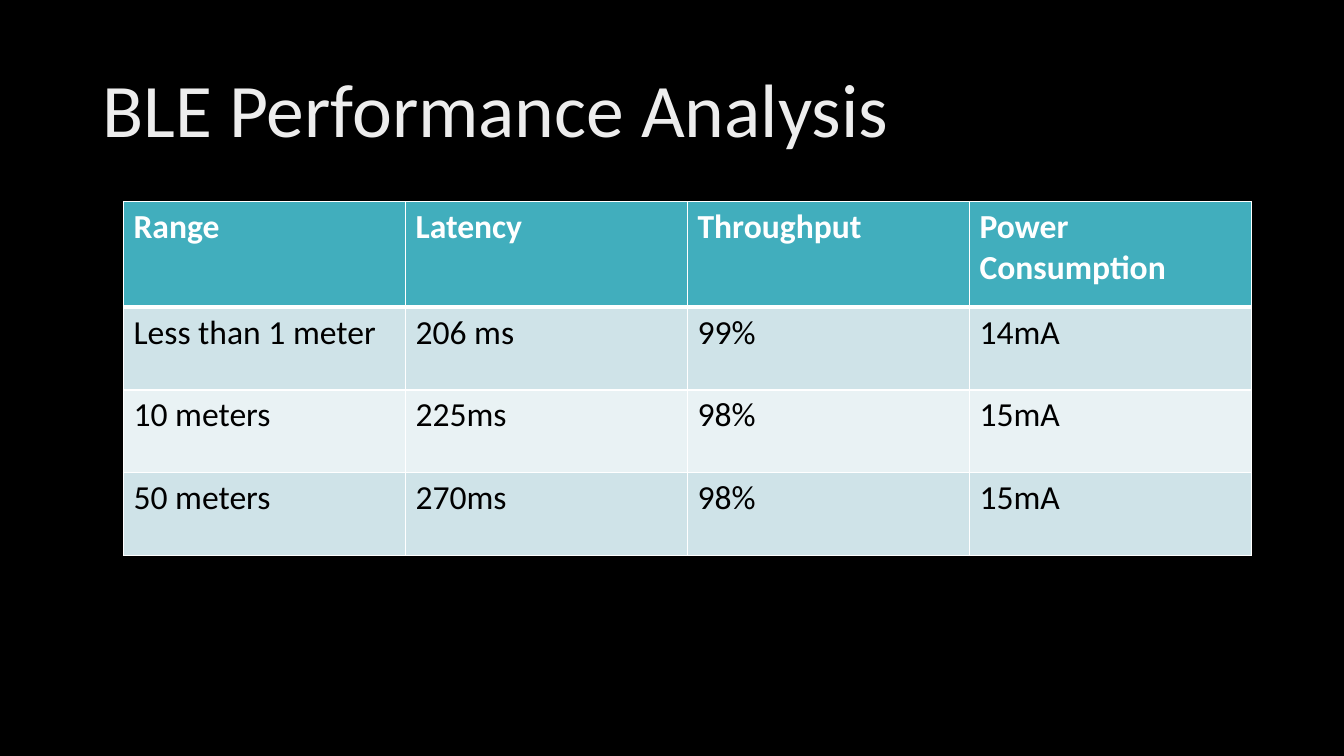
from dataclasses import dataclass

from lxml import etree
from pptx import Presentation
from pptx.dml.color import RGBColor
from pptx.enum.text import MSO_ANCHOR, PP_ALIGN
from pptx.oxml.ns import qn
from pptx.util import Pt

LEFT = PP_ALIGN.LEFT
TOP = MSO_ANCHOR.TOP
MIDDLE = MSO_ANCHOR.MIDDLE
TITLE_ONLY = 5


@dataclass(frozen=True)
class Theme:
    font: str = "Calibri"
    title_size: int = 54
    table_size: int = 24
    background: str = "000000"
    header_fill: str = "41AEBD"
    header_text: str = "FFFFFF"
    body_text: str = "000000"
    band_fills: tuple = ("CFE3E8", "E9F2F4")
    border: str = "FFFFFF"
    title_stops: tuple = ((0, "BFBFBF"), (28, "EDEDED"), (100, "FFFFFF"))
    title_angle: int = 80


THEME = Theme()
HEADER = ("Range", "Latency", "Throughput", "Power Consumption")
MEASUREMENTS = (
    ("Less than 1 meter", "206 ms", "99%", "14mA"),
    ("10 meters", "225ms", "98%", "15mA"),
    ("50 meters", "270ms", "98%", "15mA"),
)
COLUMN_WIDTH = Pt(201.45)
HEADER_HEIGHT = Pt(75.4)
ROW_HEIGHT = Pt(59.2)


def add_color(parent, color):
    etree.SubElement(parent, qn("a:srgbClr"), val=color)


def add_run(paragraph, text, size, bold=False):
    run = paragraph.add_run()
    run.text = text
    run.font.name = THEME.font
    run.font.size = Pt(size)
    run.font.bold = bold
    return run


def apply_gradient(run, stops, angle):
    run.font.fill.gradient()
    gradient = run.font._element.find(qn("a:gradFill"))
    stop_list = gradient.find(qn("a:gsLst"))
    for stop in list(stop_list):
        stop_list.remove(stop)
    for position, color in stops:
        stop = etree.SubElement(stop_list, qn("a:gs"), pos=str(position * 1000))
        add_color(stop, color)
    gradient.find(qn("a:lin")).set("ang", str(angle * 60000))


def add_title(slide, text):
    title = slide.shapes.title
    title.left, title.top = Pt(66), Pt(28.75)
    title.width, title.height = Pt(828), Pt(104.4)
    frame = title.text_frame
    frame.word_wrap = True
    frame.vertical_anchor = MIDDLE
    paragraph = frame.paragraphs[0]
    paragraph.alignment = LEFT
    paragraph.line_spacing = 0.9
    run = add_run(paragraph, text, THEME.title_size)
    apply_gradient(run, THEME.title_stops, THEME.title_angle)


def set_borders(cell, widths):
    properties = cell._tc.get_or_add_tcPr()
    for index, (side, width) in enumerate(widths.items()):
        line = etree.Element(qn(f"a:ln{side}"), w=str(Pt(width)))
        add_color(etree.SubElement(line, qn("a:solidFill")), THEME.border)
        properties.insert(index, line)


def fill_cell(cell, text, fill, color, bold, borders):
    cell.fill.solid()
    cell.fill.fore_color.rgb = RGBColor.from_string(fill)
    cell.vertical_anchor = TOP
    run = add_run(cell.text_frame.paragraphs[0], text, THEME.table_size, bold)
    run.font.color.rgb = RGBColor.from_string(color)
    set_borders(cell, borders)


def add_performance_table(slide):
    rows = (HEADER, *MEASUREMENTS)
    table = slide.shapes.add_table(
        len(rows), len(HEADER), Pt(88.2), Pt(144),
        COLUMN_WIDTH * len(HEADER),
        HEADER_HEIGHT + ROW_HEIGHT * len(MEASUREMENTS),
    ).table
    for column in table.columns:
        column.width = COLUMN_WIDTH
    for row_index, values in enumerate(rows):
        is_header = row_index == 0
        table.rows[row_index].height = HEADER_HEIGHT if is_header else ROW_HEIGHT
        fill = THEME.header_fill if is_header else THEME.band_fills[(row_index - 1) % 2]
        color = THEME.header_text if is_header else THEME.body_text
        borders = {
            "L": 1,
            "R": 1,
            "T": 3 if row_index == 1 else 1,
            "B": 3 if is_header else 1,
        }
        for column_index, text in enumerate(values):
            cell = table.cell(row_index, column_index)
            fill_cell(cell, text, fill, color, is_header, borders)


def main():
    presentation = Presentation()
    presentation.slide_width = Pt(960)
    presentation.slide_height = Pt(540)
    slide = presentation.slides.add_slide(presentation.slide_layouts[TITLE_ONLY])
    background = slide.background.fill
    background.solid()
    background.fore_color.rgb = RGBColor.from_string(THEME.background)
    add_title(slide, "BLE Performance Analysis")
    add_performance_table(slide)
    presentation.save("out.pptx")


if __name__ == "__main__":
    main()
